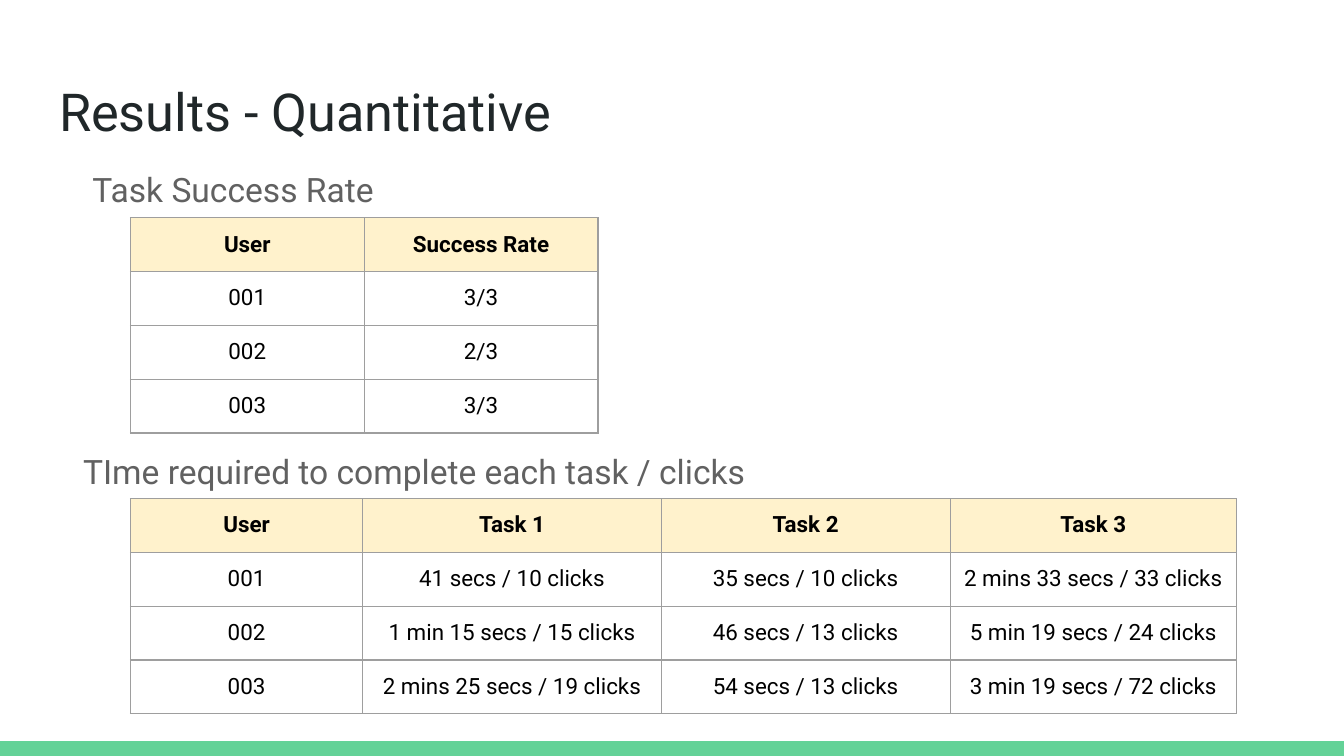
"""Build the quantitative results slide with its two tables."""
from lxml.etree import SubElement
from pptx import Presentation
from pptx.dml.color import RGBColor
from pptx.enum.shapes import MSO_SHAPE as Shape
from pptx.enum.text import MSO_ANCHOR as Anchor, PP_ALIGN as Align
from pptx.oxml import parse_xml
from pptx.oxml.ns import nsdecls, qn
from pptx.util import Inches, Pt

WIDTH = 10
HEIGHT = WIDTH * 9 / 16
FONT = "Roboto"
COLORS = {
    "bar": "63D297", "title": "202729", "heading": "616161",
    "text": "000000", "header": "FFF2CC", "border": "9E9E9E",
}
TITLE = "Results - Quantitative"
TABLE_LEFT, INSET = 0.97, 0.1
SECTIONS = [
    {
        "heading": "Task Success Rate", "box": (0.34, 1.11, 3.1, 0.5),
        "top": 1.62, "columns": [1.74, 1.74], "heights": [0.37] * 4,
        "rows": [
            ("User", "Success Rate"),
            ("001", "3/3"),
            ("002", "2/3"),
            ("003", "3/3"),
        ],
    },
    {
        "heading": "TIme required to complete each task / clicks",
        "box": (0.27, 3.21, 5.78, 0.5),
        "top": 3.71, "columns": [1.73, 2.22, 2.15, 2.13], "heights": [0.36] + [0.4] * 3,
        "rows": [
            ("User", "Task 1", "Task 2", "Task 3"),
            ("001", "41 secs / 10 clicks", "35 secs / 10 clicks", "2 mins 33 secs / 33 clicks"),
            ("002", "1 min 15 secs / 15 clicks", "46 secs / 13 clicks", "5 min 19 secs / 24 clicks"),
            ("003", "2 mins 25 secs / 19 clicks", "54 secs / 13 clicks", "3 min 19 secs / 72 clicks"),
        ],
    },
]


def color(name):
    """Return a palette colour."""
    return RGBColor.from_string(COLORS[name])


def style_text(frame, size, tint, bold=False, align=Align.LEFT):
    """Format the only paragraph of a text frame."""
    para = frame.paragraphs[0]
    para.alignment = align
    for span in para.runs:
        span.font.name, span.font.size, span.font.bold = FONT, Pt(size), bold
        span.font.color.rgb = color(tint)


def set_insets(holder):
    """Give a text frame or cell even insets."""
    holder.margin_left = holder.margin_right = Inches(INSET)
    holder.margin_top = holder.margin_bottom = Inches(INSET)


def set_frame(frame):
    """Give a text frame wrapping, even insets and a top anchor."""
    frame.word_wrap = True
    frame.vertical_anchor = Anchor.TOP
    set_insets(frame)


def add_heading(page, text, box):
    """Add an indented section heading."""
    frame = page.shapes.add_textbox(*map(Inches, box)).text_frame
    set_frame(frame)
    frame.text = text
    para = frame.paragraphs[0]
    para.line_spacing, para.space_after = 1.15, Pt(16)
    indents = para._p.get_or_add_pPr()
    indents.set("marL", str(Inches(0.5)))
    indents.set("indent", str(Inches(-0.25)))
    style_text(frame, 18, "heading")


def add_borders(cell):
    """Draw all four borders of a cell."""
    properties = cell._tc.get_or_add_tcPr()
    for place, side in enumerate(("lnL", "lnR", "lnT", "lnB")):
        line = parse_xml(f'<a:{side} {nsdecls("a")} w="{Pt(0.75)}"/>')
        fill = SubElement(line, qn("a:solidFill"))
        SubElement(fill, qn("a:srgbClr"), val=COLORS["border"])
        properties.insert(place, line)


def add_grid(page, top, columns, heights, rows):
    """Add a table with a filled header row."""
    table = page.shapes.add_table(
        len(rows), len(columns), Inches(TABLE_LEFT), Inches(top),
        Inches(sum(columns)), Inches(sum(heights)),
    ).table
    table.horz_banding = False
    for column, width in zip(table.columns, columns):
        column.width = Inches(width)
    for r, row in enumerate(rows):
        table.rows[r].height = Inches(heights[r])
        for c, text in enumerate(row):
            cell = table.cell(r, c)
            cell.text = text
            set_insets(cell)
            if r == 0:
                cell.fill.solid()
                cell.fill.fore_color.rgb = color("header")
            else:
                cell.fill.background()
            add_borders(cell)
            style_text(cell.text_frame, 12, "text", r == 0, Align.CENTER)


def main():
    """Assemble and save the slide."""
    deck = Presentation()
    deck.slide_width, deck.slide_height = Inches(WIDTH), Inches(HEIGHT)
    page = deck.slides.add_slide(deck.slide_layouts[5])

    title = page.shapes.title
    title.left, title.top, title.width, title.height = map(Inches, (0.34, 0.49, 9.32, 0.63))
    set_frame(title.text_frame)
    title.text_frame.text = TITLE
    style_text(title.text_frame, 28, "title")

    bar_height = 0.11
    bar = page.shapes.add_shape(
        Shape.RECTANGLE, 0, Inches(HEIGHT - bar_height), Inches(WIDTH), Inches(bar_height))
    bar.shadow.inherit = False
    bar.fill.solid()
    bar.fill.fore_color.rgb = color("bar")
    bar.line.fill.background()

    for section in SECTIONS:
        add_heading(page, section["heading"], section["box"])
        add_grid(page, section["top"], section["columns"], section["heights"], section["rows"])
    deck.save("out.pptx")


if __name__ == "__main__":
    main()
